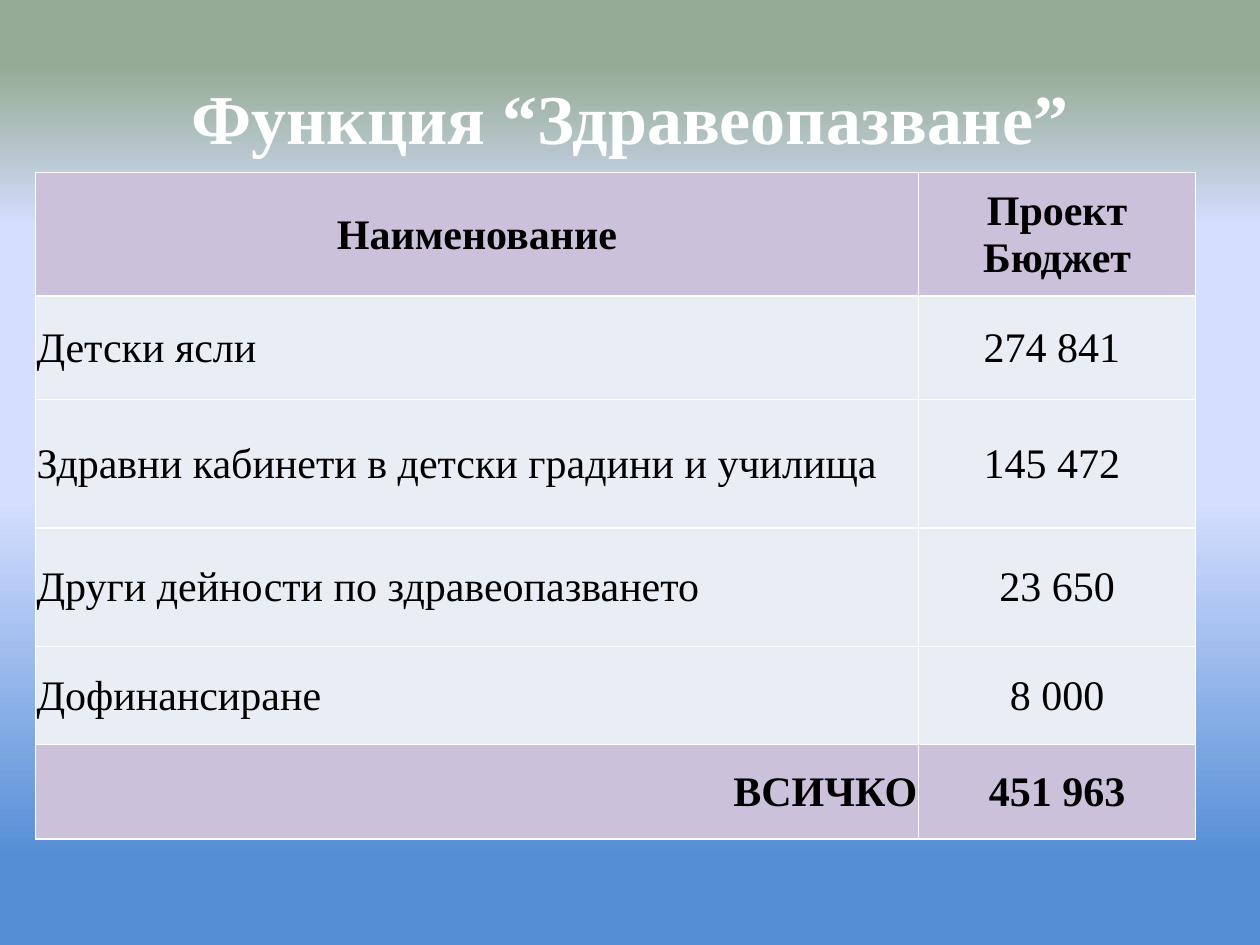
from dataclasses import dataclass

from lxml.etree import SubElement
from pptx import Presentation
from pptx.dml.color import RGBColor
from pptx.enum.text import MSO_ANCHOR, PP_ALIGN
from pptx.oxml.ns import qn
from pptx.slide import Slide
from pptx.table import _Cell
from pptx.text.text import TextFrame
from pptx.util import Pt

FONT = "Times New Roman"
WHITE, BLACK = "FFFFFF", "000000"
LILAC, PALE = "CCC1DA", "E9EDF4"
SKY_STOPS = [(9, "558ED5"), (47, "D4DEFF"), (76, "D4DEFF"), (93, "96AB94")]
COLUMN_WIDTHS = [504.72, 158.4]


@dataclass
class BudgetRow:
    name: str
    amount: str
    height: float
    name_align: PP_ALIGN = PP_ALIGN.LEFT
    emphasized: bool = False


BUDGET = [
    BudgetRow("Наименование", "Проект Бюджет", 70.56, PP_ALIGN.CENTER, True),
    BudgetRow("Детски ясли", "274 841 ", 59.04),
    BudgetRow("Здравни кабинети в детски градини и училища", "145 472 ", 73.44),
    BudgetRow("Други дейности по здравеопазването", "23 650", 67.68),
    BudgetRow("Дофинансиране", "8 000", 56.16),
    BudgetRow("ВСИЧКО", "451 963", 54, PP_ALIGN.RIGHT, True),
]


def rgb(color: str) -> RGBColor:
    return RGBColor.from_string(color)


def write(frame: TextFrame, text: str, size: float, color: str,
          bold: bool, align: PP_ALIGN) -> None:
    frame.word_wrap = True
    paragraph = frame.paragraphs[0]
    paragraph.alignment = align
    run = paragraph.add_run()
    run.text = text
    run.font.name = FONT
    run.font.size = Pt(size)
    run.font.bold = bold
    run.font.color.rgb = rgb(color)


def paint_background(slide: Slide) -> None:
    fill = slide.background.fill
    fill.gradient()
    fill.gradient_angle = 90
    stops = slide.element.find(".//" + qn("a:gsLst"))
    for stop in list(stops):
        stops.remove(stop)
    for percent, color in SKY_STOPS:
        stop = SubElement(stops, qn("a:gs"), pos=str(percent * 1000))
        SubElement(stop, qn("a:srgbClr"), val=color)


def add_borders(cell: _Cell) -> None:
    properties = cell._tc.get_or_add_tcPr()
    for position, side in enumerate(("lnL", "lnR", "lnT", "lnB")):
        line = SubElement(properties, qn(f"a:{side}"), w=str(Pt(1)))
        solid = SubElement(line, qn("a:solidFill"))
        SubElement(solid, qn("a:srgbClr"), val=WHITE)
        properties.insert(position, line)


def fill_cell(cell: _Cell, text: str, align: PP_ALIGN, emphasized: bool) -> None:
    cell.margin_left = cell.margin_right = cell.margin_top = Pt(0.72)
    cell.margin_bottom = Pt(0)
    cell.vertical_anchor = MSO_ANCHOR.MIDDLE
    cell.fill.solid()
    cell.fill.fore_color.rgb = rgb(LILAC if emphasized else PALE)
    add_borders(cell)
    write(cell.text_frame, text, 24, BLACK, emphasized, align)


def add_title(slide: Slide) -> None:
    title = slide.shapes.title
    title.left, title.top = Pt(36), Pt(21.6)
    title.width, title.height = Pt(648), Pt(90)
    title.text_frame.vertical_anchor = MSO_ANCHOR.MIDDLE
    write(title.text_frame, "Функция “Здравеопазване”", 40, WHITE, True, PP_ALIGN.CENTER)


def add_budget_table(slide: Slide) -> None:
    budget = slide.shapes.add_table(
        len(BUDGET), len(COLUMN_WIDTHS), Pt(20.16), Pt(98.64),
        Pt(sum(COLUMN_WIDTHS)), Pt(sum(row.height for row in BUDGET))).table
    budget.horz_banding = False
    for column, width in zip(budget.columns, COLUMN_WIDTHS):
        column.width = Pt(width)
    for table_row, entry in zip(budget.rows, BUDGET):
        table_row.height = Pt(entry.height)
        name_cell, amount_cell = table_row.cells
        fill_cell(name_cell, entry.name, entry.name_align, entry.emphasized)
        fill_cell(amount_cell, entry.amount, PP_ALIGN.CENTER, entry.emphasized)


def main() -> None:
    presentation = Presentation()
    presentation.slide_width, presentation.slide_height = Pt(720), Pt(540)
    slide = presentation.slides.add_slide(presentation.slide_layouts[5])
    paint_background(slide)
    add_title(slide)
    add_budget_table(slide)
    presentation.save("out.pptx")


if __name__ == "__main__":
    main()
